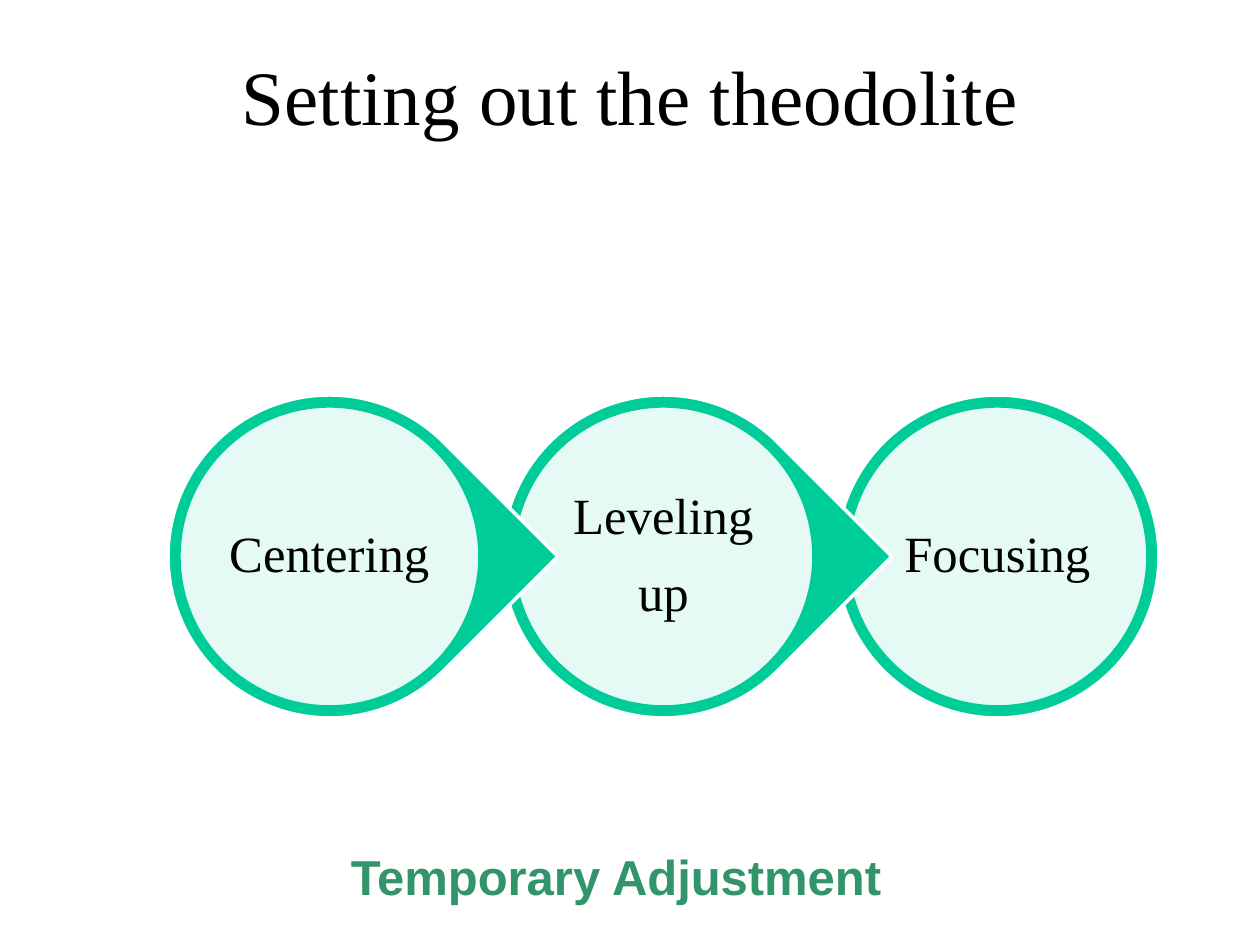
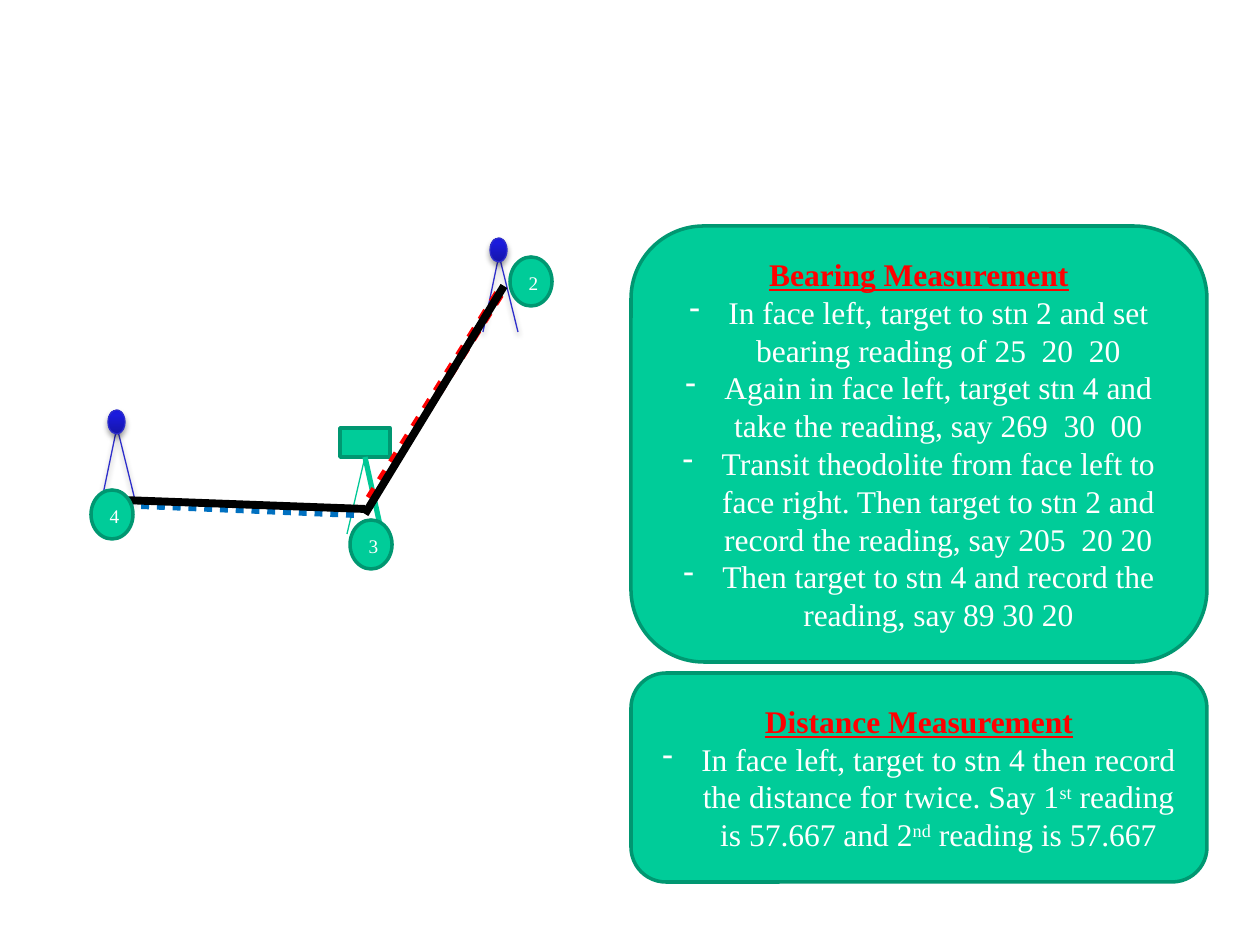
from lxml import etree
from pptx import Presentation
from pptx.dml.color import RGBColor
from pptx.enum.dml import MSO_LINE
from pptx.enum.shapes import MSO_CONNECTOR, MSO_SHAPE
from pptx.enum.text import MSO_ANCHOR, PP_ALIGN
from pptx.oxml import parse_xml
from pptx.oxml.ns import nsdecls, qn
from pptx.util import Pt

PX = 7257.14  # EMU per px, 126 px to the inch
COLORS = {
    "white": "FFFFFF", "black": "000000", "green": "00CC99", "edge": "009771",
    "leg": "00C896", "caption": "32946A", "red": "FF0000", "sight": "0070C0",
    "target": "2E2ECB",
}
SERIF = "Times New Roman"
SHADOW = (
    f'<a:effectLst {nsdecls("a")}><a:outerShdw blurRad="39370" dist="22860" dir="5400000" '
    'rotWithShape="0"><a:srgbClr val="000000"><a:alpha val="35000"/></a:srgbClr>'
    '</a:outerShdw></a:effectLst>')
BULB_FILL = (
    f'<a:gradFill {nsdecls("a")} rotWithShape="1"><a:gsLst>'
    '<a:gs pos="0"><a:srgbClr val="1515A9"/></a:gs>'
    '<a:gs pos="80000"><a:srgbClr val="1B1BDC"/></a:gs>'
    '<a:gs pos="100000"><a:srgbClr val="1818E1"/></a:gs>'
    '</a:gsLst><a:lin ang="16200000" scaled="0"/></a:gradFill>')


def add_outlined(slide, kind, box, fill, line, width=2):
    shape = slide.shapes.add_shape(kind, *(round(v * PX) for v in box))
    shape.shadow.inherit = False
    shape.fill.solid()
    shape.fill.fore_color.rgb = RGBColor.from_string(COLORS[fill])
    shape.line.color.rgb = RGBColor.from_string(COLORS[line])
    shape.line.width = Pt(width)
    return shape


def write(paragraph, text, size, color, **font_format):
    """Add a run to a centred paragraph and return it."""
    paragraph.alignment = PP_ALIGN.CENTER
    run = paragraph.add_run()
    run.text = text
    run.font.color.rgb = RGBColor.from_string(COLORS[color])
    for key, value in {"name": SERIF, "size": Pt(size), **font_format}.items():
        setattr(run.font, key, value)
    return run


deck = Presentation()
deck.slide_width, deck.slide_height = round(1260 * PX), round(945 * PX)
blank = deck.slide_layouts[6]

# Slide 1: the three steps of temporary adjustment
steps_slide = deck.slides.add_slide(blank)
headings = [
    ("Setting out the theodolite", (95, 32, 1071, 126), MSO_ANCHOR.MIDDLE, 44, "black", {}),
    ("Temporary Adjustment", (0, 840, 1232, 72), MSO_ANCHOR.TOP, 28, "caption",
     {"name": "Arial", "bold": True}),
]
for text, box, anchor, size, color, font_format in headings:
    frame = steps_slide.shapes.add_textbox(*(round(v * PX) for v in box)).text_frame
    frame.word_wrap = True
    frame.vertical_anchor = anchor
    write(frame.paragraphs[0], text, size, color, **font_format)

STEP_LEFT, STEP_TOP, STEP_PITCH = 168, 395, 334
steps = [["Centering"], ["Leveling", "up"], ["Focusing"]]
for index, words in reversed(list(enumerate(steps))):
    left = STEP_LEFT + index * STEP_PITCH
    is_last = index == len(steps) - 1
    ring = add_outlined(steps_slide, MSO_SHAPE.OVAL if is_last else MSO_SHAPE.TEAR,
                        (left, STEP_TOP, 323, 323), "green", "white")
    if not is_last:
        ring.rotation = 45
        ring.adjustments[0] = 1

    disc = add_outlined(steps_slide, MSO_SHAPE.OVAL, (left + 11, STEP_TOP + 11, 301, 301),
                        "white", "green")
    disc_color = disc._element.spPr.find(qn("a:solidFill"))[0]
    etree.SubElement(disc_color, qn("a:alpha")).set("val", "90000")

    label_box = (left + 54, STEP_TOP + 54, 215, 215)
    frame = steps_slide.shapes.add_textbox(*(round(v * PX) for v in label_box)).text_frame
    frame_format = {"word_wrap": True, "vertical_anchor": MSO_ANCHOR.MIDDLE}
    for side in ("left", "right", "top", "bottom"):
        frame_format[f"margin_{side}"] = round(5 * PX)
    for key, value in frame_format.items():
        setattr(frame, key, value)
    for number, word in enumerate(words):
        paragraph = frame.add_paragraph() if number else frame.paragraphs[0]
        paragraph.line_spacing = 0.9
        paragraph.space_after = Pt(13)
        write(paragraph, word, 29, "black")

# Slide 2: traverse sketch with bearing and distance notes
traverse_slide = deck.slides.add_slide(blank)
theodolite = add_outlined(traverse_slide, MSO_SHAPE.RECTANGLE, (340, 428, 50, 29),
                          "green", "edge")

target_tops = [(117, 427), (499, 255)]
# start, end, colour, width, dash
sketch_lines = [
    ((365, 457), (347, 534), "leg", 0.75, None),
    ((365, 457), (382, 534), "leg", 3, None),
]
for x, y in target_tops:
    for spread in (-16, 19):
        sketch_lines.append(((x, y), (x + spread, y + 77), "target", 0.75, None))
sketch_lines += [
    ((499, 294), (364, 509), "red", 6, MSO_LINE.ROUND_DOT),
    ((354, 514), (115, 504), "sight", 4.5, MSO_LINE.ROUND_DOT),
    ((122, 500), (365, 509), "black", 4.5, None),
    ((504, 286), (365, 514), "black", 4.5, None),
]
for start, end, color, width, dash in sketch_lines:
    connector = traverse_slide.shapes.add_connector(
        MSO_CONNECTOR.STRAIGHT, *(round(v * PX) for v in start + end))
    connector.line.color.rgb = RGBColor.from_string(COLORS[color])
    connector.line.width = Pt(width)
    if dash:
        connector.line.dash_style = dash
    if color == "leg":
        connector.begin_connect(theodolite, 2)
    effects = SHADOW if color == "target" else f'<a:effectLst {nsdecls("a")}/>'
    connector._element.spPr.append(parse_xml(effects))

for x, y in target_tops:
    bulb = add_outlined(traverse_slide, MSO_SHAPE.OVAL, (x - 9, y - 17, 17, 24),
                        "target", "target", 0.75)
    properties = bulb._element.spPr
    for tag, xml in (("a:solidFill", BULB_FILL), ("a:effectLst", SHADOW)):
        properties.replace(properties.find(qn(tag)), parse_xml(xml))

stations = [("4", 91, 490), ("2", 510, 257), ("3", 350, 520)]
for number, left, top in stations:
    station = add_outlined(traverse_slide, MSO_SHAPE.OVAL, (left, top, 42, 49), "green", "edge")
    station.text_frame.vertical_anchor = MSO_ANCHOR.MIDDLE
    paragraph = station.text_frame.paragraphs[0]
    paragraph.line_spacing = 1.15
    paragraph.space_after = Pt(10)
    write(paragraph, number, 11, "white")

# Each note is a list of parts; every second part is superscript
cards = [
    ("Bearing Measurement", 226, 436, [
        ["In face left, target to stn 2 and set bearing reading of 25  20  20"],
        ["Again in face left, target stn 4 and take the reading, say 269  30  00"],
        ["Transit theodolite from face left to face right. Then target to stn 2 "
         "and record the reading, say 205  20 20"],
        ["Then target to stn 4 and record the reading, say 89 30 20"],
    ]),
    ("Distance Measurement", 673, 209, [
        ["In face left, target to stn 4 then record the distance for twice. Say 1", "st",
         " reading is 57.667 and 2", "nd", " reading is 57.667"],
    ]),
]
for heading, top, height, notes in cards:
    card = add_outlined(traverse_slide, MSO_SHAPE.ROUNDED_RECTANGLE, (631, top, 576, height),
                        "green", "edge")
    frame = card.text_frame
    frame.word_wrap = True
    frame.vertical_anchor = MSO_ANCHOR.MIDDLE
    write(frame.paragraphs[0], heading, 18, "red", bold=True, underline=True)
    for parts in notes:
        paragraph = frame.add_paragraph()
        bullet_format = paragraph._p.get_or_add_pPr()
        bullet_format.set("marL", str(round(39 * PX)))
        bullet_format.set("indent", str(round(-39 * PX)))
        etree.SubElement(bullet_format, qn("a:buFontTx"))
        etree.SubElement(bullet_format, qn("a:buChar")).set("char", "-")
        for position, part in enumerate(parts):
            run = write(paragraph, part, 18, "white")
            if position % 2:
                run.font._element.set("baseline", "30000")

deck.save("out.pptx")
